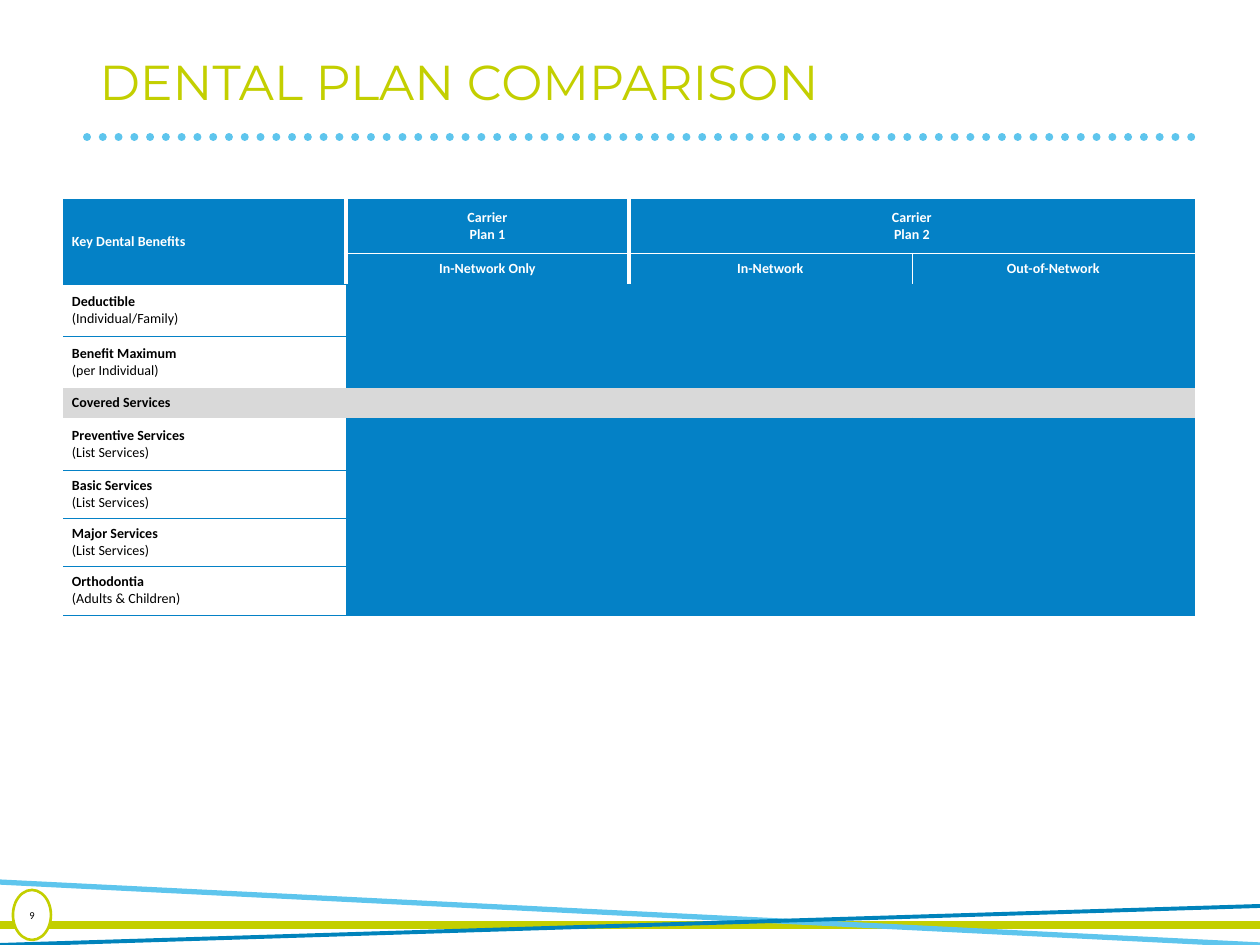
from dataclasses import dataclass

import pptx
import pptx.dml.color
import pptx.enum.dml
import pptx.enum.shapes
import pptx.enum.text
import pptx.oxml.ns
import pptx.util
from lxml import etree

EMU_PER_PX = 914400 / 126
ALIGN = pptx.enum.text.PP_ALIGN
MIDDLE = pptx.enum.text.MSO_ANCHOR.MIDDLE
NO_STYLE_NO_GRID = "{2D5ABB26-0587-4C30-8999-92F81FD0307C}"


@dataclass(frozen=True)
class Theme:
    lime: str = "C3CF00"
    sky: str = "5EC5ED"
    ocean: str = "0083BB"
    blue: str = "0481C6"
    grey: str = "D9D9D9"
    white: str = "FFFFFF"
    black: str = "000000"
    title_font: str = "Montserrat"
    body_font: str = "Calibri"
    title_size: int = 28
    table_size: int = 8
    number_size: int = 6
    hairline: float = 0.25
    divider: float = 3


THEME = Theme()

# Table content: first column label and its detail, one pair per body row
BENEFITS = [
    ("Deductible", "(Individual/Family)"),
    ("Benefit Maximum", "(per Individual)"),
    ("Covered Services", None),
    ("Preventive Services", "(List Services)"),
    ("Basic Services", "(List Services)"),
    ("Major Services", "(List Services)"),
    ("Orthodontia", "(Adults & Children)"),
]
PLANS = {1: "Carrier\nPlan 1", 2: "Carrier\nPlan 2"}
NETWORKS = ["In-Network Only", "In-Network", "Out-of-Network"]
HEADER_ROWS = 2
SECTION_ROW = 4
COLUMN_WIDTH = 283
ROW_HEIGHTS = [54, 31, 52, 52, 30, 52, 48, 48, 49]
COLUMNS, ROWS = 4, len(ROW_HEIGHTS)
TINTS = {1: 30, 2: 20, 3: 20}


def px(length):
    return pptx.util.Emu(round(length * EMU_PER_PX))


def rgb(color):
    return pptx.dml.color.RGBColor.from_string(color)


def add_xml(parent, tag, **attributes):
    return etree.SubElement(parent, pptx.oxml.ns.qn(tag), **attributes)


def format_font(font, name, size, color, bold=False):
    font.name, font.size, font.bold = name, pptx.util.Pt(size), bold
    font.color.rgb = rgb(color)


def add_title(slide, text):
    title = slide.shapes.title
    title.left, title.top, title.width, title.height = px(87), px(50), px(1086), px(69)
    frame = title.text_frame
    frame.text = text
    frame.vertical_anchor = MIDDLE
    heading = frame.paragraphs[0]
    heading.alignment = ALIGN.LEFT
    heading.line_spacing = 0.9
    format_font(heading.runs[0].font, THEME.title_font, THEME.title_size, THEME.lime)


def add_rule(slide, start, end, color, width, dotted=False):
    rule = slide.shapes.add_connector(
        pptx.enum.shapes.MSO_CONNECTOR.STRAIGHT, *map(px, start + end))
    rule.line.color.rgb = rgb(color)
    rule.line.width = pptx.util.Pt(width)
    if dotted:
        rule.line.dash_style = pptx.enum.dml.MSO_LINE.ROUND_DOT
        rule.line._get_or_add_ln().set("cap", "rnd")
    add_xml(rule._element.spPr, "a:effectLst")


def add_page_number(slide, number):
    badge = slide.shapes.add_shape(
        pptx.enum.shapes.MSO_SHAPE.OVAL, px(13), px(890), px(38), px(50))
    badge.shadow.inherit = False
    badge.fill.solid()
    badge.fill.fore_color.rgb = rgb(THEME.white)
    badge.line.color.rgb = rgb(THEME.lime)
    badge.line.width = pptx.util.Pt(1.5)
    frame = badge.text_frame
    frame.margin_left = frame.margin_right = frame.margin_top = frame.margin_bottom = 0
    frame.vertical_anchor = MIDDLE
    frame.text = number
    frame.paragraphs[0].alignment = ALIGN.CENTER
    format_font(frame.paragraphs[0].runs[0].font, THEME.body_font, THEME.number_size, THEME.black)


def vertical_edge(row, column):
    """Colour and width of the edge to the left of a column, if there is one."""
    if column in (0, COLUMNS) or row == SECTION_ROW or (row, column) == (0, 3):
        return None
    if row >= HEADER_ROWS:
        return THEME.blue, THEME.hairline
    return THEME.white, THEME.hairline if column == 3 else THEME.divider


def horizontal_edge(row, column):
    """Colour and width of the edge above a row, if there is one."""
    if row in (0, SECTION_ROW, SECTION_ROW + 1) or (row, column) == (1, 0):
        return None
    return THEME.white if row < HEADER_ROWS else THEME.blue, THEME.hairline


def set_borders(cell, row, column):
    edges = {
        "a:lnL": vertical_edge(row, column),
        "a:lnR": vertical_edge(row, column + 1),
        "a:lnT": horizontal_edge(row, column),
        "a:lnB": horizontal_edge(row + 1, column),
    }
    properties = cell._tc.get_or_add_tcPr()
    for tag, edge in edges.items():
        if edge:
            color, width = edge
            line = add_xml(properties, tag, w=str(pptx.util.Pt(width)))
            add_xml(add_xml(line, "a:solidFill"), "a:srgbClr", val=color)
        else:
            add_xml(add_xml(properties, tag, w="0"), "a:noFill")


def set_fill(cell, color, opacity=100):
    if color is None:
        cell.fill.background()
        return
    cell.fill.solid()
    cell.fill.fore_color.rgb = rgb(color)
    if opacity < 100:
        tint = cell._tc.tcPr.find(".//" + pptx.oxml.ns.qn("a:srgbClr"))
        add_xml(tint, "a:alpha", val=str(opacity * 1000))


def write_cell(cell, text, color, alignment, bold_lines):
    cell.text_frame.text = text
    for index, line in enumerate(cell.text_frame.paragraphs):
        line.alignment = alignment
        for run in line.runs:
            format_font(run.font, THEME.body_font, THEME.table_size, color, index < bold_lines)


def add_benefits_table(slide):
    table = slide.shapes.add_table(
        ROWS, COLUMNS, px(63), px(199), px(COLUMNS * COLUMN_WIDTH), px(sum(ROW_HEIGHTS))).table
    table.first_row = table.horz_banding = False
    table._tbl.tblPr.find(pptx.oxml.ns.qn("a:tableStyleId")).text = NO_STYLE_NO_GRID
    for column in table.columns:
        column.width = px(COLUMN_WIDTH)
    for row, height in zip(table.rows, ROW_HEIGHTS):
        row.height = px(height)

    # Borders, fills and margins
    for row in range(ROWS):
        for column in range(COLUMNS):
            cell = table.cell(row, column)
            cell.vertical_anchor = MIDDLE
            cell.margin_left = cell.margin_right = px(9)
            cell.margin_top = cell.margin_bottom = px(5 if row < HEADER_ROWS else 4)
            set_borders(cell, row, column)
            if row < HEADER_ROWS:
                set_fill(cell, THEME.blue)
            elif row == SECTION_ROW:
                set_fill(cell, THEME.grey)
            else:
                set_fill(cell, THEME.blue if column else None, TINTS.get(column, 100))
            if column:
                add_xml(cell.text_frame.paragraphs[0]._p, "a:endParaRPr",
                        sz=str(THEME.table_size * 100))

    # Merged cells
    for first, last in [((0, 0), (1, 0)), ((0, 2), (0, 3)), ((SECTION_ROW, 0), (SECTION_ROW, 3))]:
        table.cell(*first).merge(table.cell(*last))

    # Header and row labels
    write_cell(table.cell(0, 0), "Key Dental Benefits", THEME.white, ALIGN.LEFT, 1)
    for column, plan in PLANS.items():
        write_cell(table.cell(0, column), plan, THEME.white, ALIGN.CENTER, 2)
    for column, network in enumerate(NETWORKS, 1):
        write_cell(table.cell(1, column), network, THEME.white, ALIGN.CENTER, 1)
    for row, label in enumerate(BENEFITS, HEADER_ROWS):
        write_cell(table.cell(row, 0), "\n".join(filter(None, label)), THEME.black, ALIGN.LEFT, 1)


def main():
    deck = pptx.Presentation()
    deck.slide_width, deck.slide_height = px(1260), px(945)
    slide = deck.slides.add_slide(deck.slide_layouts[5])
    # Title rule and footer stripes
    add_rule(slide, (87, 137), (1196, 137), THEME.sky, 4.5, dotted=True)
    add_rule(slide, (-1, 925), (1260, 925), THEME.lime, 4.5)
    add_rule(slide, (1260, 945), (-1, 882), THEME.sky, 3)
    add_rule(slide, (-1, 945), (1260, 906), THEME.ocean, 2.25)
    add_title(slide, "DENTAL PLAN COMPARISON")
    add_page_number(slide, "9")
    add_benefits_table(slide)
    deck.save("out.pptx")


if __name__ == "__main__":
    main()
